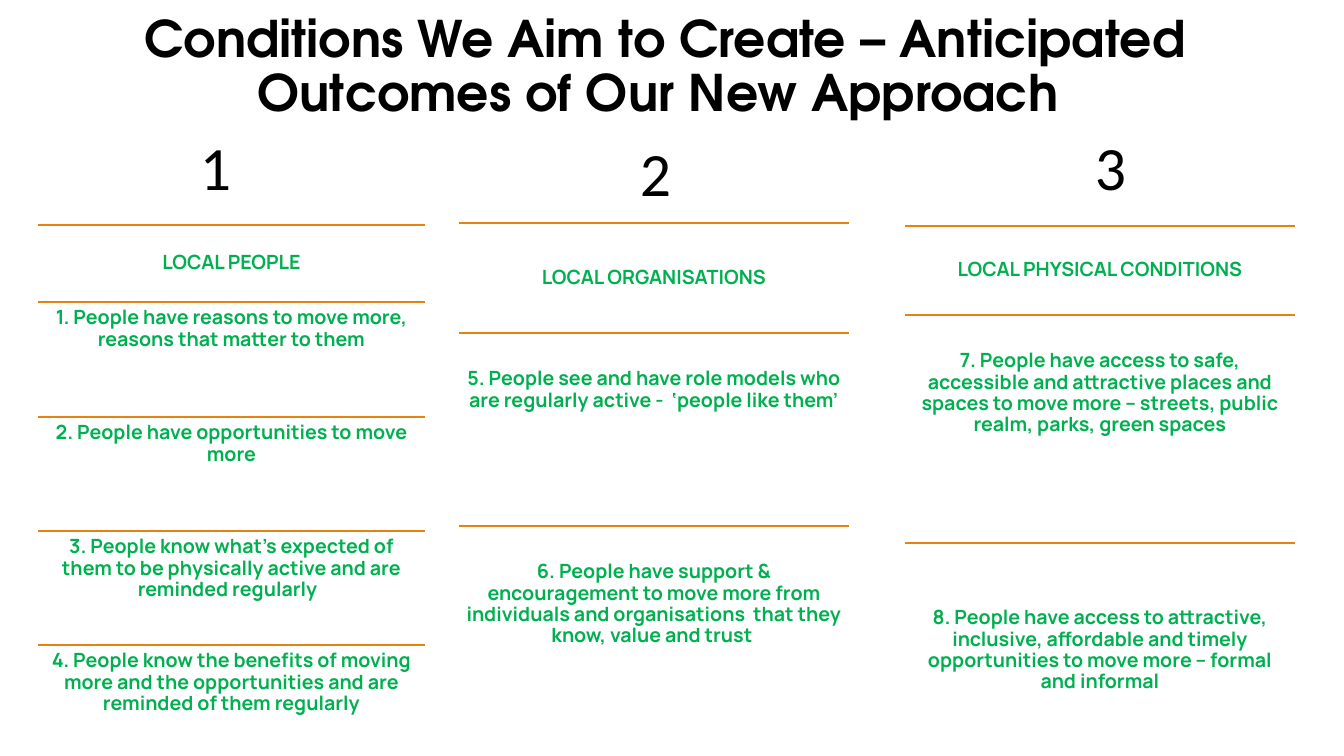
from dataclasses import dataclass

from lxml import etree
from pptx import Presentation
from pptx.dml.color import RGBColor
from pptx.enum.shapes import MSO_CONNECTOR
from pptx.enum.text import MSO_ANCHOR, PP_ALIGN
from pptx.oxml.ns import qn
from pptx.util import Pt

STRAIGHT = MSO_CONNECTOR.STRAIGHT
TOP, MIDDLE = MSO_ANCHOR.TOP, MSO_ANCHOR.MIDDLE
LEFT, CENTER = PP_ALIGN.LEFT, PP_ALIGN.CENTER

# Content: each row is (top, space above the text, wording), lengths in px
TITLE = "Conditions We Aim to Create – Anticipated Outcomes of Our New Approach "
COLUMNS = [
    {
        "number": "1", "number_at": (190, 124),
        "left": 38, "width": 387, "bottom": 755,
        "rows": [
            (225, 0, "LOCAL PEOPLE"),
            (302, 0, "1. People have reasons to move more, reasons that matter to them"),
            (417, 0, "2. People have opportunities to move more"),
            (531, 0, "3. People know what’s expected of them to be physically active "
                     "and are reminded regularly  "),
            (645, 0, "4. People know the benefits of moving more and the opportunities "
                     "and are reminded of them regularly"),
        ],
    },
    {
        "number": "2", "number_at": (630, 130),
        "left": 459, "width": 390, "bottom": 756,
        "rows": [
            (223, 0, "LOCAL ORGANISATIONS"),
            (333, 30, "5. People see and have role models who are regularly active "
                      "-  ‘people like them’"),
            (526, 30, "6. People have support & encouragement to move more from "
                      "individuals and organisations  that they know, value and trust "),
        ],
    },
    {
        "number": "3", "number_at": (1085, 124),
        "left": 905, "width": 390, "bottom": 729,
        "rows": [
            (226, 0, "LOCAL PHYSICAL CONDITIONS"),
            (315, 30, "7. People have access to safe, accessible and attractive places "
                      "and spaces to move more – streets, public realm, parks, green spaces"),
            (543, 59, "8. People have access to attractive, inclusive, affordable and "
                      "timely opportunities to move more – formal and informal"),
        ],
    },
]


@dataclass(frozen=True)
class Theme:
    black: RGBColor = RGBColor(0x00, 0x00, 0x00)
    green: RGBColor = RGBColor(0x00, 0xB0, 0x50)
    orange: RGBColor = RGBColor(0xE4, 0x83, 0x12)
    title_font: str = "TeX Gyre Adventor"
    number_font: str = "Calibri"
    body_font: str = "Manrope"
    title_size: int = 36
    number_size: int = 44
    body_size: int = 14
    rule_width: int = 1


THEME = Theme()
SLIDE_WIDTH, SLIDE_HEIGHT = 1344, 756
CELL_INSET = 6
NUMBER_SIDE = 85


def px(length):
    return round(length * 914400 / 100.8)


def add_text(slide, text, box, *, font, size, color, bold=False, align=CENTER,
             anchor=TOP, insets=(0, 0, 0, 0), line_spacing=0.9):
    shape = slide.shapes.add_textbox(*map(px, box))
    frame = shape.text_frame
    frame.word_wrap = True
    frame.vertical_anchor = anchor
    (frame.margin_left, frame.margin_top,
     frame.margin_right, frame.margin_bottom) = map(px, insets)
    paragraph = frame.paragraphs[0]
    paragraph.alignment = align
    paragraph.line_spacing = line_spacing
    run = paragraph.add_run()
    run.text = text
    run.font.name = font
    run.font.size = Pt(size)
    run.font.bold = bold
    run.font.color.rgb = color


def add_rule(slide, left, top, width):
    rule = slide.shapes.add_connector(
        STRAIGHT, px(left), px(top), px(left + width), px(top))
    rule.line.color.rgb = THEME.orange
    rule.line.width = Pt(THEME.rule_width)
    etree.SubElement(rule._element.spPr, qn("a:effectLst"))


def add_column(slide, column):
    left, width, rows = column["left"], column["width"], column["rows"]
    # Every row runs down to the top of the next one
    bottoms = [row[0] for row in rows[1:]] + [column["bottom"]]
    for index, ((top, space, text), bottom) in enumerate(zip(rows, bottoms)):
        add_rule(slide, left, top, width)
        add_text(slide, text, (left, top, width, bottom - top),
                 font=THEME.body_font, size=THEME.body_size, color=THEME.green,
                 bold=True, anchor=MIDDLE if index == 0 else TOP,
                 insets=(CELL_INSET, CELL_INSET + space, CELL_INSET, CELL_INSET))
    # Large number above the column
    add_text(slide, column["number"], (*column["number_at"], NUMBER_SIDE, NUMBER_SIDE),
             font=THEME.number_font, size=THEME.number_size, color=THEME.black,
             align=LEFT, insets=(10, 5, 10, 5), line_spacing=1.0)


def main():
    presentation = Presentation()
    presentation.slide_width = px(SLIDE_WIDTH)
    presentation.slide_height = px(SLIDE_HEIGHT)
    slide = presentation.slides.add_slide(presentation.slide_layouts[6])

    # Title
    add_text(slide, TITLE, (37, 14, 1256, 47), font=THEME.title_font,
             size=THEME.title_size, color=THEME.black, bold=True)

    # Three columns of outcomes
    for column in COLUMNS:
        add_column(slide, column)

    presentation.save("out.pptx")


if __name__ == "__main__":
    main()
